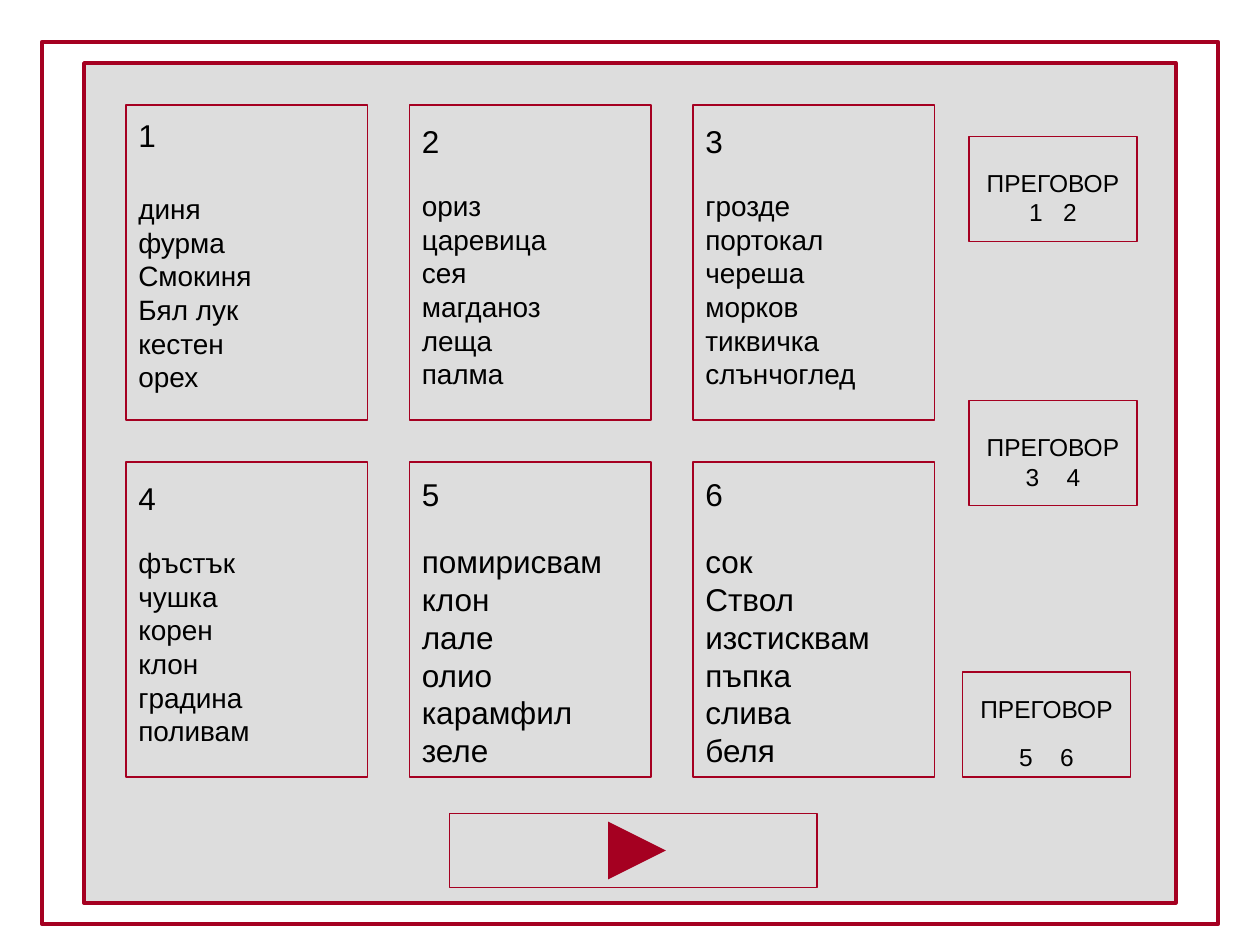
import pptx
import pptx.util
import pptx.dml.color
import pptx.enum.shapes
import pptx.enum.text
import pptx.oxml.ns
from dataclasses import dataclass
from lxml import etree

Pt = pptx.util.Pt
Rgb = pptx.dml.color.RGBColor
Kind = pptx.enum.shapes.MSO_SHAPE
Align = pptx.enum.text.PP_ALIGN


@dataclass(frozen=True)
class Theme:
    red: Rgb = Rgb(0xA5, 0x00, 0x21)
    gray: Rgb = Rgb(0xDD, 0xDD, 0xDD)
    ink: Rgb = Rgb(0, 0, 0)
    font: str = "Arial"
    big: int = 18
    mid: int = 16
    small: int = 14


THEME = Theme()

CARDS = [
    ("1", ["диня", "фурма", "Смокиня", "Бял лук", "кестен", "орех"], THEME.mid, 6.5, 21.5),
    ("2", ["ориз", "царевица", "сея", "магданоз", "леща", "палма"], THEME.mid, 9.5, 16.8),
    ("3", ["грозде", "портокал", "череша", "морков", "тиквичка", "слънчоглед"], THEME.mid, 9.5, 16.8),
    ("4", ["фъстък", "чушка", "корен", "клон", "градина", "поливам"], THEME.mid, 9.5, 16.8),
    ("5", ["помирисвам", "клон", "лале", "олио", "карамфил", "зеле"], THEME.big, 7.5, 16.8),
    ("6", ["сок", "Ствол", "изстисквам", "пъпка", "слива", "беля"], THEME.big, 7.5, 16.8),
]

BUTTONS = [
    ((553.7, 78, 96, 60), "1", "2", 7.8, 18, 0),
    ((553.7, 229, 96, 60), "3", "4", 11.7, 18, 0),
    ((550, 384, 96, 60), "5", "6", 11.7, 12.5, 10.8),
]


def add_rect(slide, box, width=0.75, fill=None):
    shape = slide.shapes.add_shape(Kind.RECTANGLE, *(Pt(n) for n in box))
    shape.shadow.inherit = False
    if fill is None:
        shape.fill.background()
    else:
        shape.fill.solid()
        shape.fill.fore_color.rgb = fill
    shape.line.color.rgb = THEME.red
    shape.line.width = Pt(width)
    return shape


def set_frame(shape, top):
    frame = shape.text_frame
    frame.word_wrap = True
    frame.vertical_anchor = pptx.enum.text.MSO_ANCHOR.TOP
    frame.margin_top = Pt(top)
    frame.margin_bottom = Pt(0)
    return frame


def add_run(para, text, size):
    run = para.add_run()
    run.text = text
    run.font.name = THEME.font
    run.font.size = Pt(size)
    run.font.color.rgb = THEME.ink
    return run


def add_card(slide, box, label, words, size, top, gap):
    frame = set_frame(add_rect(slide, box), top)
    head = frame.paragraphs[0]
    head.alignment = Align.LEFT
    add_run(head, label, THEME.big)
    for i, word in enumerate(words):
        para = frame.add_paragraph()
        para.alignment = Align.LEFT
        if i == 0:
            para.space_before = Pt(gap)
        add_run(para, word, size)


def add_button(slide, box, left, right, space, top, gap):
    frame = set_frame(add_rect(slide, box), top)
    head = frame.paragraphs[0]
    head.alignment = Align.CENTER
    add_run(head, "ПРЕГОВОР", THEME.small)
    para = frame.add_paragraph()
    para.alignment = Align.CENTER
    para.space_before = Pt(gap)
    add_run(para, left, THEME.small)
    blank = add_run(para, " ", THEME.small)
    blank.font._element.set("spc", str(round(space * 100)))
    add_run(para, right, THEME.small)


def add_next(slide, box):
    x, y, w, h = box
    mid = y + h / 2
    arrow = slide.shapes.add_connector(
        pptx.enum.shapes.MSO_CONNECTOR.STRAIGHT,
        Pt(x + 93.5), Pt(mid), Pt(x + 123.5), Pt(mid))
    arrow.line.color.rgb = THEME.red
    arrow.line.width = Pt(11)
    qn = pptx.oxml.ns.qn
    tip = etree.SubElement(arrow.line._get_or_add_ln(), qn("a:tailEnd"))
    tip.set("type", "triangle")
    etree.SubElement(arrow._element.spPr, qn("a:effectLst"))
    add_rect(slide, box)


def add_grid(slide, box):
    x, y, w, h = box
    gap = 24
    wide = (w - 2 * gap) / 3
    high = (h - gap) / 2
    for i, card in enumerate(CARDS):
        row, col = divmod(i, 3)
        spot = (x + col * (wide + gap), y + row * (high + gap), wide, high)
        add_card(slide, spot, *card)


def main():
    deck = pptx.Presentation()
    deck.slide_width = Pt(720)
    deck.slide_height = Pt(540)
    slide = deck.slides.add_slide(deck.slide_layouts[6])
    add_rect(slide, (24, 24, 672, 504), 2.5)
    add_rect(slide, (48, 36, 624, 480), 2, THEME.gray)
    add_grid(slide, (72, 60, 462, 384))
    add_next(slide, (257, 465, 210, 42))
    for button in BUTTONS:
        add_button(slide, *button)
    deck.save("out.pptx")


if __name__ == "__main__":
    main()
